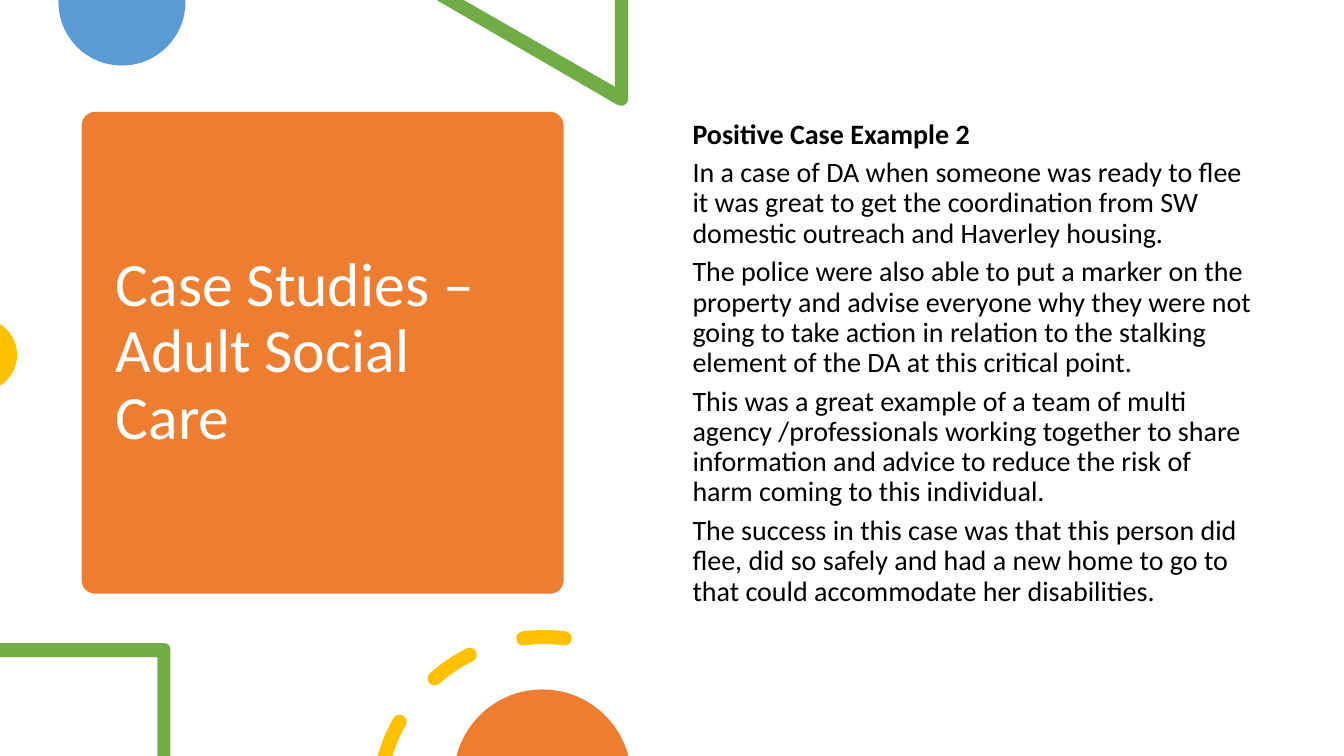
from itertools import pairwise
from math import cos, radians, sin, tan

from pptx import Presentation
from pptx.dml.color import RGBColor
from pptx.enum.shapes import MSO_SHAPE
from pptx.enum.text import MSO_ANCHOR
from pptx.oxml.ns import qn
from pptx.util import Inches, Pt

ORANGE = RGBColor(0xED, 0x7D, 0x31)
BLUE = RGBColor(0x5B, 0x9B, 0xD5)
GREEN = RGBColor(0x70, 0xAD, 0x47)
YELLOW = RGBColor(0xFF, 0xC0, 0x00)
WHITE = RGBColor(0xFF, 0xFF, 0xFF)
BLACK = RGBColor(0x00, 0x00, 0x00)


def arc(center, radius, *stops):
    center_x, center_y = center
    angles = [radians(stop) for stop in stops]
    points = [(center_x + radius * cos(angle), center_y + radius * sin(angle)) for angle in angles]
    segments = [[points[0]]]
    for (first, last), ((x1, y1), (x2, y2)) in zip(pairwise(angles), pairwise(points)):
        handle = radius * 4 / 3 * tan((last - first) / 4)
        segments.append([(x1 - handle * sin(first), y1 + handle * cos(first)),
                         (x2 + handle * sin(last), y2 - handle * cos(last)),
                         (x2, y2)])
    return segments


def add_text(paragraphs, left, top, width, height, size, color,
             anchor=MSO_ANCHOR.TOP, space_after=0, bold_first=False):
    text_box = slide.shapes.add_textbox(Inches(left), Inches(top), Inches(width), Inches(height))
    frame = text_box.text_frame
    frame.word_wrap = True
    frame.vertical_anchor = anchor
    for index, text in enumerate(paragraphs):
        paragraph = frame.paragraphs[0] if index == 0 else frame.add_paragraph()
        paragraph.line_spacing = 0.9
        paragraph.space_after = Pt(space_after)
        run = paragraph.add_run()
        run.text = text
        run.font.name = "Calibri"
        run.font.size = Pt(size)
        run.font.bold = bold_first and index == 0
        run.font.color.rgb = color


presentation = Presentation()
presentation.slide_width = Inches(13.33)
presentation.slide_height = Inches(7.5)
slide = presentation.slides.add_slide(presentation.slide_layouts[6])

title_card = slide.shapes.add_shape(
    MSO_SHAPE.ROUNDED_RECTANGLE, Inches(0.81), Inches(1.11), Inches(4.78), Inches(4.78))
title_card.adjustments[0] = 0.028
title_card.shadow.inherit = False
title_card.fill.solid()
title_card.fill.fore_color.rgb = ORANGE
title_card.line.fill.background()

add_text(["Case Studies – Adult Social Care"], 1.05, 1.22, 4.31, 4.56,
         size=44, color=WHITE, anchor=MSO_ANCHOR.MIDDLE)

ring_center, ring_radius, cap = (5.4, 7.97), 1.65, 0.07
dashes = [arc(ring_center, ring_radius + cap, 195.9, 209.4)
          + arc(arc(ring_center, ring_radius, 209.4)[0][0], cap, 209.4, 299.4, 389.4)[1:]
          + arc(ring_center, ring_radius - cap, 209.4, 197.3)[1:]]
for start, end in [(228.7, 243.3), (262.7, 277)]:
    start_point, end_point = [arc(ring_center, ring_radius, angle)[0][0] for angle in (start, end)]
    dashes.append(arc(ring_center, ring_radius + cap, start, end)
                  + arc(end_point, cap, end, end + 90, end + 180)[1:]
                  + arc(ring_center, ring_radius - cap, end, start)[1:]
                  + arc(start_point, cap, start + 180, start + 270, start + 360)[1:])

triangle = [[(6.23, 0)], [(6.1, 0)], [(6.1, 0.86)], [(4.6, 0)], [(4.33, 0)]]
triangle += arc((6.16, 0.98), 0.07, 120, 90, 0)
square = [[(0, 6.38)], [(0, 6.52)], [(1.56, 6.52)], [(1.56, 7.5)], [(1.69, 7.5)]]
square += arc((1.63, 6.44), 0.06, 0, -90)
decorations = [
    (BLUE, [[[(1.84, 0)], [(0.58, 0)]] + arc((1.21, 0.02), 0.63, 180, 90, 0)]),
    (GREEN, [triangle]),
    (YELLOW, [arc((-0.19, 3.52), 0.36, -58, 0, 58)]),
    (GREEN, [square]),
    (YELLOW, dashes),
    (ORANGE, [arc((5.38, 7.72), 0.88, 194.5, 270, 345.5)]),
]
for color, outlines in decorations:
    start_x, start_y = outlines[0][0][0]
    builder = slide.shapes.build_freeform(Inches(start_x), Inches(start_y))
    for index, outline in enumerate(outlines):
        points = [(Inches(x), Inches(y)) for segment in outline for x, y in segment]
        if index:
            builder.move_to(*points[0])
        builder.add_line_segments(points[1:], close=True)
    decoration = builder.convert_to_shape()
    lines = iter(list(decoration.element.iter(qn("a:lnTo"))))
    for outline in outlines:
        for segment in outline[1:]:
            curve = next(lines)
            if len(segment) == 3:
                curve.tag = qn("a:cubicBezTo")
                for line in (next(lines), next(lines)):
                    curve.append(line[0])
                    line.getparent().remove(line)
    decoration.shadow.inherit = False
    decoration.fill.solid()
    decoration.fill.fore_color.rgb = color
    decoration.line.fill.background()

add_text([
    "Positive Case Example 2",
    "In a case of DA when someone was ready to flee it was great to get the coordination "
    "from SW domestic outreach and Haverley housing.",
    "The police were also able to put a marker on the property and advise everyone why they "
    "were not going to take action in relation to the stalking element of the DA at this "
    "critical point.",
    "This was a great example of a team of multi agency /professionals working together to "
    "share information and advice to reduce the risk of harm coming to this individual.",
    "The success in this case was that this person did flee, did so safely and had a new home "
    "to go to that could accommodate her disabilities.",
], 6.77, 1.14, 5.75, 5.35, size=20, color=BLACK, space_after=6, bold_first=True)

presentation.save("out.pptx")
